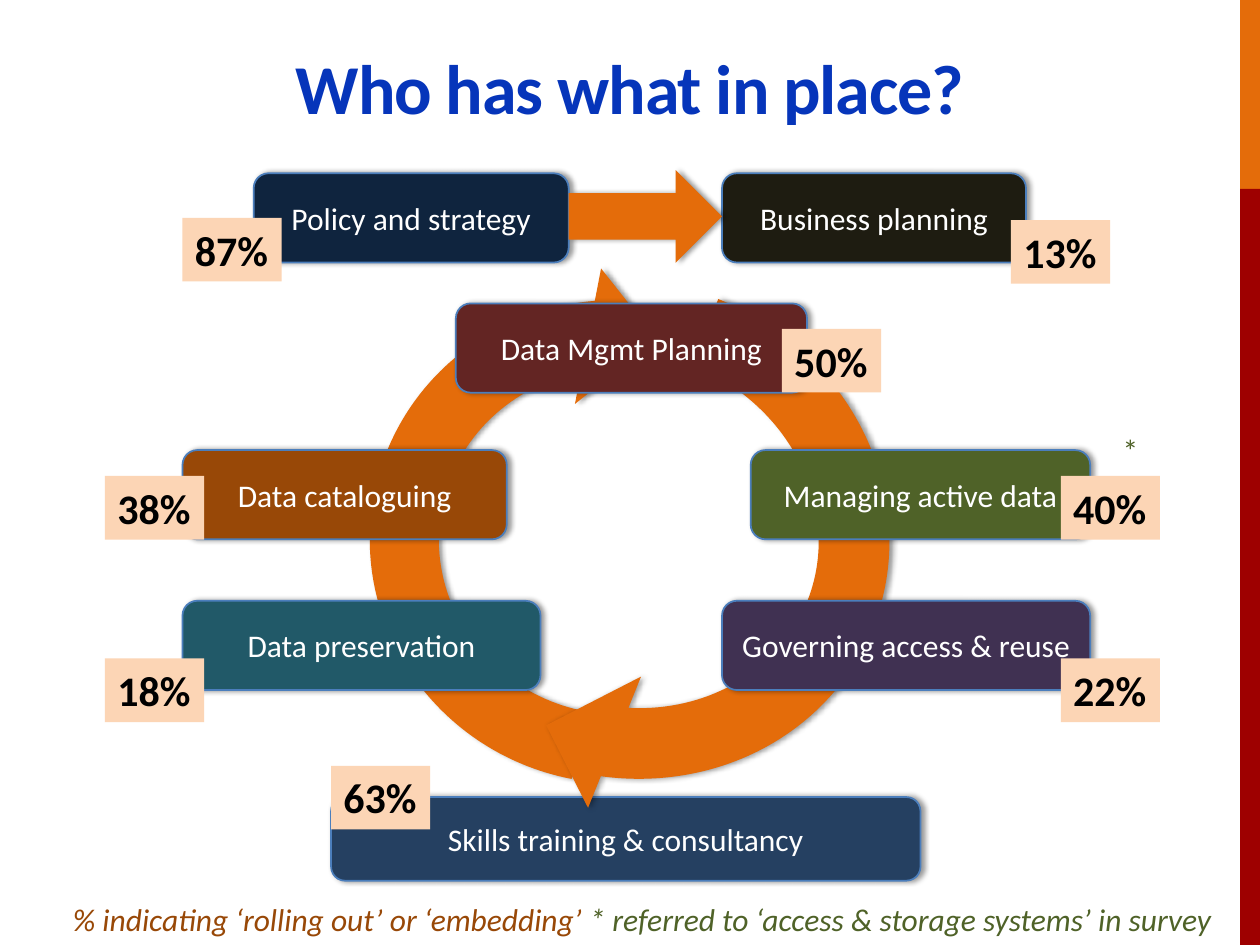
from dataclasses import dataclass

from lxml import etree
from pptx import Presentation
from pptx import util as u
from pptx.dml import color
from pptx.enum import shapes, text
from pptx.oxml import ns

SHAPE = shapes.MSO_AUTO_SHAPE_TYPE


@dataclass(frozen=True)
class Theme:
    font: str = "Calibri"
    title_size: int = 40
    badge_size: int = 24
    body_size: int = 18
    title: str = "0635BA"
    orange: str = "E46C0A"
    red: str = "9E0000"
    outline: str = "4B7EBC"
    badge: str = "FCD5B5"
    white: str = "FFFFFF"
    black: str = "000000"
    navy: str = "0F243E"
    olive: str = "1E1C11"
    maroon: str = "632523"
    green: str = "4F6228"
    brown: str = "984807"
    purple: str = "403152"
    teal: str = "215968"
    blue: str = "254061"


class SlideBuilder:
    def __init__(self, slide, theme):
        self.slide = slide
        self.theme = theme

    def add_text(self, paragraph, content, size, rgb, **styles):
        run = paragraph.add_run()
        run.text = content
        formats = {"name": self.theme.font, "size": u.Pt(size), **styles}
        for name, value in formats.items():
            setattr(run.font, name, value)
        run.font.color.rgb = color.RGBColor.from_string(rgb)
        return run

    def block(self, kind, box, fill, rotation=0, shadow=False):
        shape = self.slide.shapes.add_shape(kind, *map(u.Pt, box))
        shape.rotation = rotation
        shape.fill.solid()
        shape.fill.fore_color.rgb = color.RGBColor.from_string(fill)
        shape.line.fill.background()
        shape.shadow.inherit = False
        if shadow:
            self.add_shadow(shape)
        return shape

    def add_shadow(self, shape):
        effects = shape._element.spPr.find(ns.qn("a:effectLst"))
        outer = etree.SubElement(
            effects, ns.qn("a:outerShdw"), blurRad=str(u.Pt(3.1)),
            dist=str(u.Pt(1.8)), dir="0", rotWithShape="0")
        tint = etree.SubElement(outer, ns.qn("a:srgbClr"), val=self.theme.black)
        etree.SubElement(tint, ns.qn("a:alpha"), val="40000")

    def title(self, content, box):
        shape = self.slide.shapes.title
        for name, value in zip(("left", "top", "width", "height"), box):
            setattr(shape, name, u.Pt(value))
        frame = shape.text_frame
        frame.auto_size = text.MSO_AUTO_SIZE.NONE
        frame.vertical_anchor = text.MSO_ANCHOR.BOTTOM
        paragraph = frame.paragraphs[0]
        paragraph.alignment = text.PP_ALIGN.CENTER
        run = self.add_text(paragraph, content, self.theme.title_size,
                            self.theme.title, bold=True)
        run.font._element.set("spc", "-60")

    def activity(self, content, box, fill):
        shape = self.block(SHAPE.ROUNDED_RECTANGLE, box, fill, shadow=True)
        shape.line.color.rgb = color.RGBColor.from_string(self.theme.outline)
        shape.line.width = u.Pt(1)
        frame = shape.text_frame
        frame.vertical_anchor = text.MSO_ANCHOR.MIDDLE
        paragraph = frame.paragraphs[0]
        paragraph.alignment = text.PP_ALIGN.CENTER
        self.add_text(paragraph, content, self.theme.body_size, self.theme.white)

    def fit_text(self, shape):
        frame = shape.text_frame
        frame.word_wrap = False
        frame.auto_size = text.MSO_AUTO_SIZE.SHAPE_TO_FIT_TEXT
        frame.vertical_anchor = text.MSO_ANCHOR.TOP
        frame.paragraphs[0].alignment = text.PP_ALIGN.LEFT
        return frame.paragraphs[0]

    def badge(self, content, left, top):
        shape = self.block(SHAPE.RECTANGLE, (left, top, 56.7, 36.35), self.theme.badge)
        self.add_text(self.fit_text(shape), content, self.theme.badge_size,
                      self.theme.black, bold=True)

    def note(self, box, *parts, italic=False):
        shape = self.slide.shapes.add_textbox(*map(u.Pt, box))
        paragraph = self.fit_text(shape)
        for content, rgb in parts:
            self.add_text(paragraph, content, self.theme.body_size, rgb, italic=italic)


def main():
    presentation = Presentation()
    presentation.slide_width = u.Pt(720)
    presentation.slide_height = u.Pt(540)
    slide = presentation.slides.add_slide(presentation.slide_layouts[5])
    theme = Theme()
    builder = SlideBuilder(slide, theme)

    builder.block(SHAPE.RECTANGLE, (708.6, 0, 11.4, 108), theme.orange)
    builder.block(SHAPE.RECTANGLE, (708.6, 108, 11.4, 432), theme.red)
    builder.title("Who has what in place?", (36, 31.7, 648, 45.4))

    builder.activity("Skills training & consultancy", (189.2, 455.5, 336.8, 47.8), theme.blue)
    cycle = [
        ((195.1, 148.3, 315.4, 322.6), 280.9),
        ((195.8, 129.6, 323.3, 344.9), 112),
    ]
    for box, rotation in cycle:
        builder.block(SHAPE.CIRCULAR_ARROW, box, theme.orange, rotation, shadow=True)

    top_row, plan_row, active_row, access_row = 99, 173.4, 257.2, 343.3
    left_edge, right_edge = 104.3, 412.6
    activities = [
        ("Policy and strategy", 145, top_row, 180, theme.navy),
        ("Business planning", right_edge, top_row, 173.7, theme.olive),
        ("Data Mgmt Planning", 260.5, plan_row, 200.7, theme.maroon),
        ("Managing active data", 429, active_row, 194, theme.green),
        ("Data cataloguing", left_edge, active_row, 185.3, theme.brown),
        ("Governing access & reuse", right_edge, access_row, 210.4, theme.purple),
        ("Data preservation", left_edge, access_row, 204.6, theme.teal),
    ]
    for content, left, top, width, fill in activities:
        builder.activity(content, (left, top, width, 51), fill)
    builder.block(SHAPE.RIGHT_ARROW, (325, 97.2, 87.6, 53), theme.orange, shadow=True)

    builder.note(
        (34.6, 511, 676, 29),
        ("% indicating ‘rolling out’ or ‘embedding’ ", theme.brown),
        ("* referred to ‘access & storage systems’ in survey", theme.green),
        italic=True)

    left_badge, right_badge = 60, 606.2
    active_badge, access_badge = 272, 376.3
    badges = [
        ("87%", left_edge, 124.5),
        ("13%", 577.7, 125.8),
        ("50%", 446.8, 188),
        ("40%", right_badge, active_badge),
        ("22%", right_badge, access_badge),
        ("63%", 189.2, 437.6),
        ("18%", left_badge, access_badge),
        ("38%", left_badge, active_badge),
    ]
    for content, left, top in badges:
        builder.badge(content, left, top)
    builder.note((634.5, 242.6, 23.8, 29), ("*", theme.green))

    presentation.save("out.pptx")


if __name__ == "__main__":
    main()
